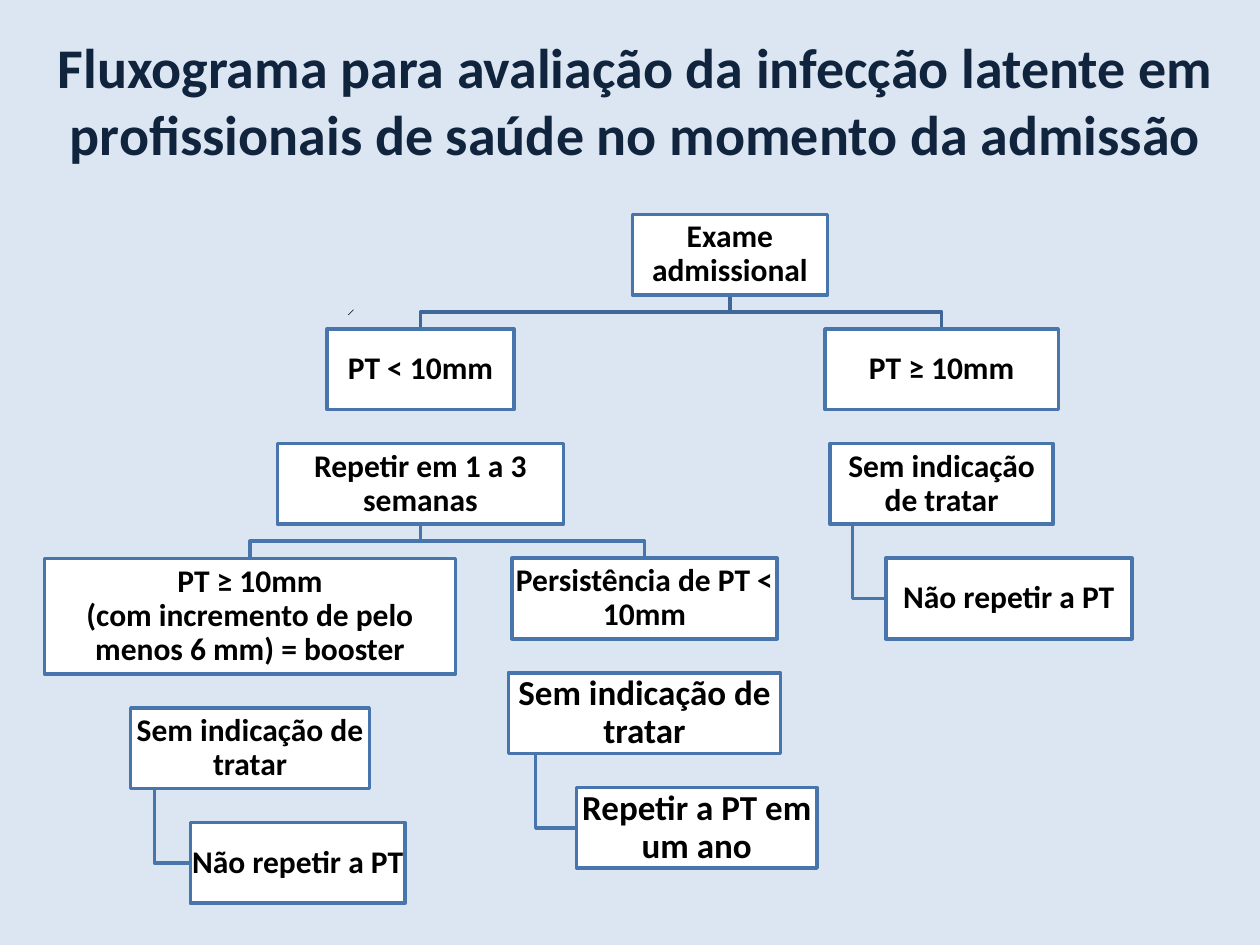
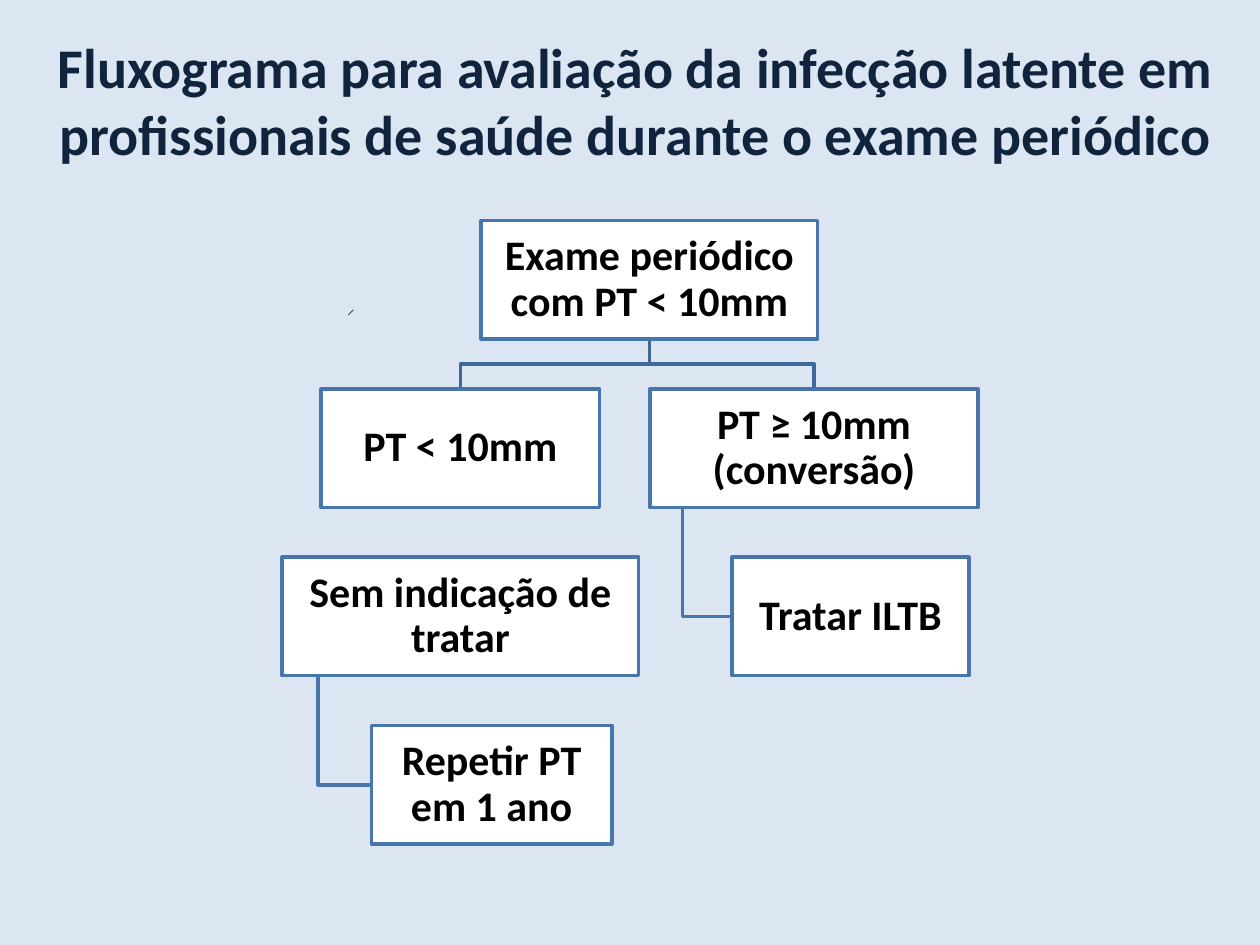
from dataclasses import dataclass

from lxml import etree
from pptx import Presentation
from pptx.dml.color import RGBColor
from pptx.enum.shapes import MSO_CONNECTOR, MSO_SHAPE
from pptx.enum.text import MSO_ANCHOR, PP_ALIGN
from pptx.oxml.ns import qn
from pptx.util import Pt

CENTER = PP_ALIGN.CENTER
MIDDLE = MSO_ANCHOR.MIDDLE
TOP = MSO_ANCHOR.TOP
RECTANGLE = MSO_SHAPE.RECTANGLE
STRAIGHT = MSO_CONNECTOR.STRAIGHT

COLORS = {
    "background": "DCE6F2",
    "title": "10243E",
    "text": "000000",
    "box": "FFFFFF",
    "line": "4875AC",
    "root_line": "3F6797",
}
FONT = "Calibri"
SLIDE_SIZE = (720, 540)
TITLE_BOX = (14.4, 15.1, 697.7, 83.5)
LINE_WIDTH = 2
TICK_BOX = (199, 177, 3, 3)


@dataclass
class Node:
    text: str
    width: float
    link: str = "stack"
    shift: float = 0
    size: float = 0
    height: float = 0
    children: tuple = ()


@dataclass
class Style:
    size: float
    height: float
    gap: float
    inset: float


def color(name):
    return RGBColor.from_string(COLORS[name])


def set_text(box, text, *, size, ink, insets, anchor, spacing=None):
    frame = box.text_frame
    frame.word_wrap = True
    frame.vertical_anchor = anchor
    frame.margin_left = frame.margin_right = Pt(insets[0])
    frame.margin_top = frame.margin_bottom = Pt(insets[1])
    for index, line in enumerate(text.split("\n")):
        para = frame.add_paragraph() if index else frame.paragraphs[0]
        para.alignment = CENTER
        para.line_spacing = spacing
        span = para.add_run()
        span.text = line
        span.font.name = FONT
        span.font.size = Pt(size)
        span.font.bold = True
        span.font.color.rgb = color(ink)


def draw_title(page, text, box):
    title = page.shapes.add_textbox(*map(Pt, box))
    set_text(title, text, size=32, ink="title", insets=(7.2, 3.6), anchor=TOP)


def draw_tick(page, box):
    left, top, width, height = box
    tick = page.shapes.add_connector(
        STRAIGHT, Pt(left), Pt(top + height), Pt(left + width), Pt(top))
    tick.line.color.rgb = color("text")
    tick.line.width = Pt(0.25)
    etree.SubElement(tick._element.spPr, qn("a:effectLst"))


def draw_path(page, points, ink):
    start, *others = [(Pt(x), Pt(y)) for x, y in points]
    builder = page.shapes.build_freeform(*start)
    builder.add_line_segments(others, close=False)
    path = builder.convert_to_shape()
    path.shadow.inherit = False
    path.fill.background()
    path.line.color.rgb = color(ink)
    path.line.width = Pt(LINE_WIDTH)


def draw_node(page, node, box, style):
    shape = page.shapes.add_shape(RECTANGLE, *map(Pt, box))
    shape.shadow.inherit = False
    shape.fill.solid()
    shape.fill.fore_color.rgb = color("box")
    shape.line.color.rgb = color("line")
    shape.line.width = Pt(LINE_WIDTH)
    set_text(shape, node.text, size=node.size or style.size, ink="text",
             insets=(style.inset, style.inset), anchor=MIDDLE, spacing=0.9)


def draw_tree(page, node, center, top, style, ink="root_line"):
    height = node.height or style.height
    left = center - node.width / 2
    bottom = top + height
    child_top = bottom + style.gap
    for child in node.children:
        child_center = center + child.shift
        if child.link == "fork":
            middle = bottom + style.gap / 2
            draw_path(page, [(center, bottom), (center, middle),
                             (child_center, middle), (child_center, child_top)], ink)
        elif child.link == "hang":
            stem = left + node.width * 0.1
            child_left = left + node.width * 0.25
            child_center = child_left + child.width / 2
            child_middle = child_top + (child.height or style.height) / 2
            draw_path(page, [(stem, bottom), (stem, child_middle),
                             (child_left, child_middle)], "line")
        draw_tree(page, child, child_center, child_top, style, "line")
    draw_node(page, node, (left, top, node.width, height), style)


def draw_flowchart_page(deck, title, root, center, top, style):
    page = deck.slides.add_slide(deck.slide_layouts[6])
    page.background.fill.solid()
    page.background.fill.fore_color.rgb = color("background")
    draw_title(page, title, TITLE_BOX)
    draw_tick(page, TICK_BOX)
    draw_tree(page, root, center, top, style)


BOOSTER = Node(
    "PT ≥ 10mm\n(com incremento de pelo menos 6 mm) = booster", 235, "fork", -97.4,
    height=66.2, children=(
        Node("Sem indicação de tratar", 136.4, children=(
            Node("Não repetir a PT", 122.6, "hang"),)),))

PERSISTENCE = Node(
    "Persistência de PT < 10mm", 151.5, "fork", 128, children=(
        Node("Sem indicação de tratar", 155.5, size=20, children=(
            Node("Repetir a PT em um ano", 137.5, "hang", size=20),)),))

ADMISSION = Node("Exame admissional", 111.6, children=(
    Node("PT < 10mm", 106.6, "fork", -176.8, children=(
        Node("Repetir em 1 a 3 semanas", 163.4, children=(BOOSTER, PERSISTENCE)),)),
    Node("PT ≥ 10mm", 133.4, "fork", 121, children=(
        Node("Sem indicação de tratar", 127.6, children=(
            Node("Não repetir a PT", 140.6, "hang"),)),)),
))

PERIODIC = Node("Exame periódico com PT < 10mm", 192.4, children=(
    Node("PT < 10mm", 159.2, "fork", -108, children=(
        Node("Sem indicação de tratar", 203.6, children=(
            Node("Repetir PT em 1 ano", 137.4, "hang"),)),)),
    Node("PT ≥ 10mm (conversão)", 187.4, "fork", 94, children=(
        Node("Tratar ILTB", 135.4, "hang"),)),
))


def main():
    deck = Presentation()
    deck.slide_width, deck.slide_height = map(Pt, SLIDE_SIZE)
    subject = "Fluxograma para avaliação da infecção latente em profissionais de saúde "
    draw_flowchart_page(deck, subject + "no momento da admissão", ADMISSION, 417.1, 122.5,
                        Style(size=18, height=46.1, gap=19.4, inset=0.9))
    draw_flowchart_page(deck, subject + "durante o exame periódico", PERIODIC, 371.1, 126,
                        Style(size=24, height=67.8, gap=28.4, inset=1.2))
    deck.save("out.pptx")


if __name__ == "__main__":
    main()
